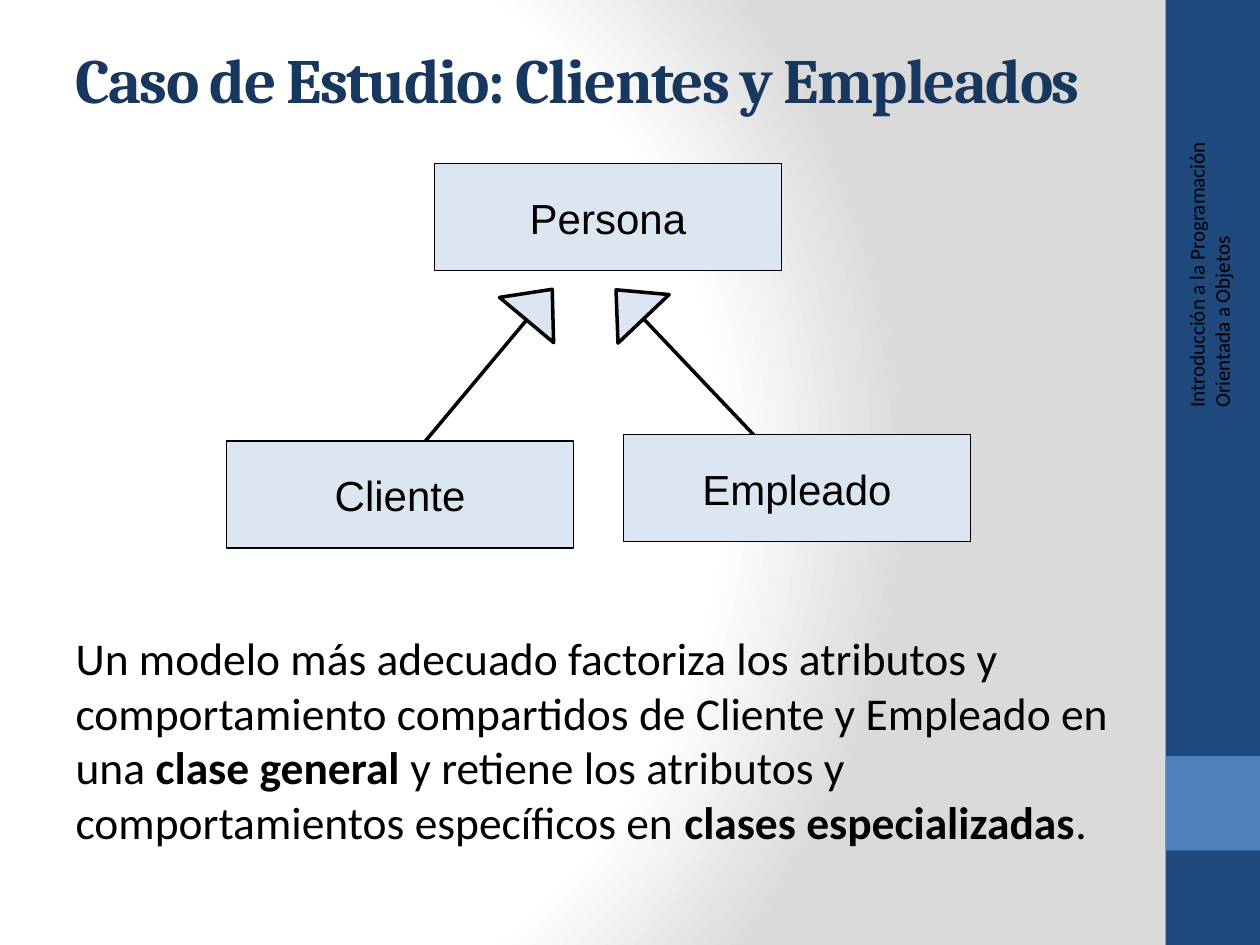
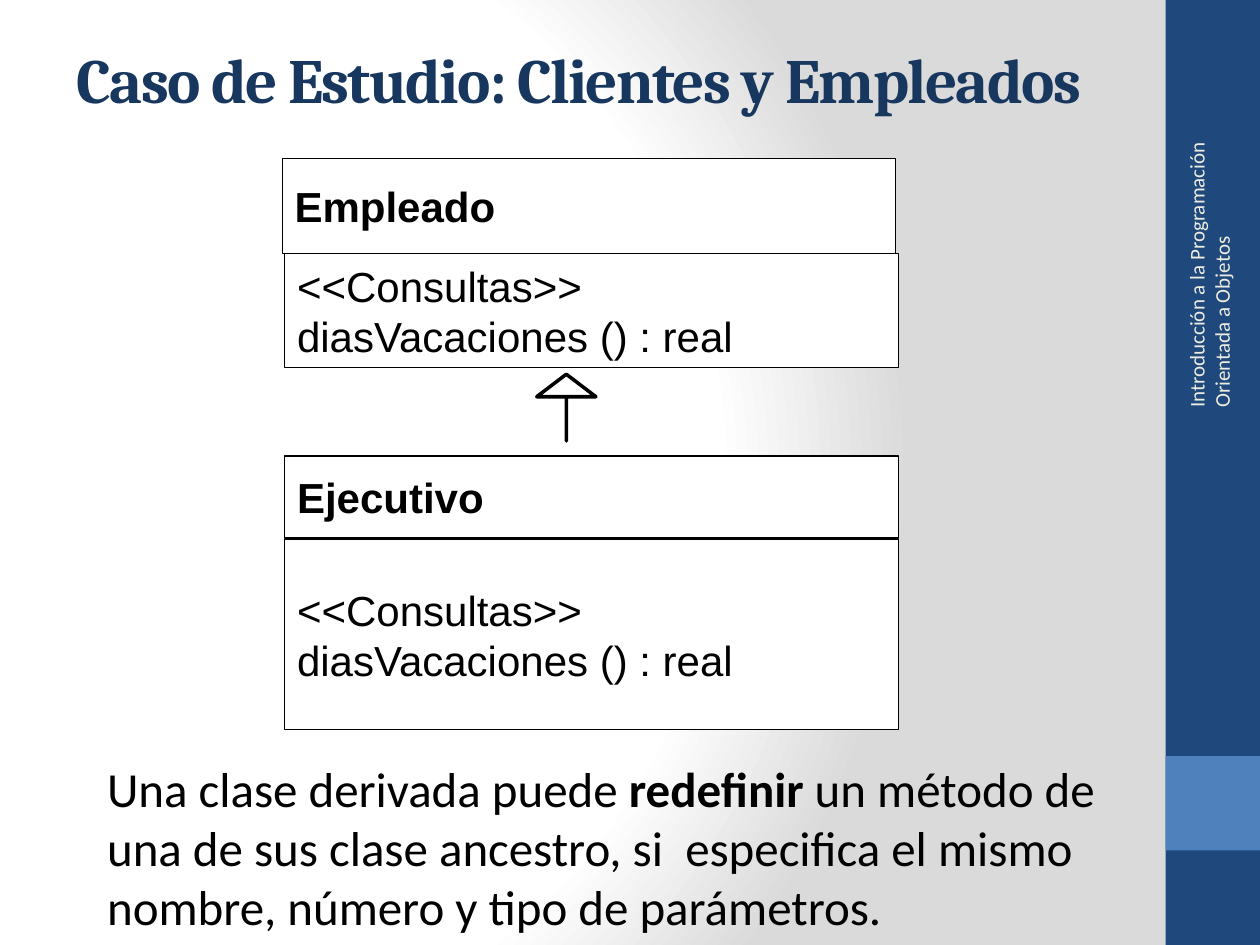
"""Build two slides on inheritance between Persona, Cliente and Empleado."""
from lxml import etree
from pptx import Presentation
from pptx.dml.color import RGBColor
from pptx.enum.shapes import MSO_SHAPE as Shape
from pptx.enum.text import MSO_ANCHOR as Anchor, MSO_AUTO_SIZE as AutoSize, PP_ALIGN as Align
from pptx.oxml import parse_xml
from pptx.oxml.ns import nsdecls, qn
from pptx.util import Inches, Pt

COLORS = {
    "black": "000000", "white": "FFFFFF", "grey": "DADADA", "cream": "EEECE1",
    "navy": "1F497D", "blue": "4F81BD", "title": "17375E", "pale": "DCE6F2",
}
TITLE = "Caso de Estudio: Clientes y Empleados"
COURSE = "Introducción a la Programación Orientada a Objetos"
METHODS = ["<<Consultas>>", "diasVacaciones () : real"]
GRADIENT_STOPS = [(0, "white"), (75000, "white"), (100000, "grey")]


def rgb(name):
    return RGBColor.from_string(COLORS[name])


def place(shape, left, top, width, height):
    shape.left, shape.top = Inches(left), Inches(top)
    shape.width, shape.height = Inches(width), Inches(height)


def style_font(para, face, size, color="black", bold=None):
    font = para.font
    font.name, font.size, font.bold = face, Pt(size), bold
    font.color.rgb = rgb(color)


def add_block(slide, kind, at, fill, line_width=None):
    block = slide.shapes.add_shape(kind, *map(Inches, at))
    block.shadow.inherit = False
    block.fill.solid()
    block.fill.fore_color.rgb = rgb(fill)
    if line_width:
        block.line.color.rgb = rgb("black")
        block.line.width = Pt(line_width)
    else:
        block.line.fill.background()
    return block


def add_class_box(slide, at, lines, fill="white", align=Align.LEFT, bold=False):
    box = add_block(slide, Shape.RECTANGLE, at, fill, 0.75)
    frame = box.text_frame
    frame.word_wrap = True
    frame.vertical_anchor = Anchor.MIDDLE
    frame.text = "\n".join(lines)
    for para in frame.paragraphs:
        para.alignment = align
        style_font(para, "Arial", 24, bold=bold)


def add_inheritance_arrow(slide, at, rotation, head, fill):
    arrow = add_block(slide, Shape.RIGHT_ARROW, at, fill, 2)
    arrow.rotation = rotation
    arrow.adjustments[0], arrow.adjustments[1] = 0, head


def set_background(master):
    fill = master.background.fill
    fill.solid()
    stops = "".join(
        f'<a:gs pos="{pos}"><a:srgbClr val="{COLORS[name]}"/></a:gs>'
        for pos, name in GRADIENT_STOPS)
    gradient = parse_xml(
        f'<a:gradFill {nsdecls("a")} rotWithShape="1"><a:gsLst>{stops}</a:gsLst>'
        '<a:path path="circle"><a:fillToRect l="20000" t="50000" r="100000" b="50000"/>'
        '</a:path></a:gradFill>')
    solid = next(master.element.iter(qn("a:solidFill")))
    solid.getparent().replace(solid, gradient)


def add_master_bands(master, slide):
    bands = [((9.25, 0, 0.75, 7.5), "navy"), ((9.25, 6, 0.75, 0.75), "blue")]
    for number, (at, color) in enumerate(bands, start=101):
        band = add_block(slide, Shape.RECTANGLE, at, color)
        next(band.element.iter(qn("p:cNvPr"))).set("id", str(number))
        master.shapes.element.append(band.element)


def set_title(slide, left):
    title = slide.shapes.title
    place(title, left, 0, 8.67, 1.25)
    frame = title.text_frame
    frame.text = TITLE
    frame.auto_size = AutoSize.NONE
    frame.vertical_anchor = Anchor.MIDDLE
    para = frame.paragraphs[0]
    para.alignment = Align.LEFT
    style_font(para, "Cambria", 36, "title", True)
    next(title.element.iter(qn("a:defRPr"))).set("spc", "-100")


def set_body(slide, at, marked_text, size):
    """Fill the body placeholder, with bold between asterisks."""
    body = slide.placeholders[1]
    place(body, *at)
    frame = body.text_frame
    frame.auto_size = AutoSize.NONE
    para = frame.paragraphs[0]
    para.space_before = Pt(6)
    style_font(para, "Calibri", size)
    for index, text in enumerate(marked_text.split("*")):
        span = para.add_run()
        span.text = text
        span.font.bold = index % 2 == 1
    properties = next(body.element.iter(qn("a:pPr")))
    properties.set("marL", "0")
    properties.set("indent", "0")
    bullet = etree.Element(qn("a:buNone"))
    properties.find(qn("a:defRPr")).addprevious(bullet)


def add_course_label(slide, color):
    label = slide.shapes.add_textbox(*map(Inches, (8.26, 1.8, 2.67, 0.4)))
    label.rotation = 270
    frame = label.text_frame
    frame.word_wrap = True
    frame.vertical_anchor = Anchor.MIDDLE
    frame.text = COURSE
    style_font(frame.paragraphs[0], "Calibri", 12, color)


def add_case_slide(deck, title_left, label_color):
    slide = deck.slides.add_slide(deck.slide_layouts[1])
    set_title(slide, title_left)
    add_course_label(slide, label_color)
    return slide


def draw_hierarchy(slide):
    for left, rotation, top in [(3.07, 309.9, 2.63), (4.64, 226.5, 2.6)]:
        add_inheritance_arrow(slide, (left, top, 1.6, 0.56), rotation, 0.567, "pale")
    for name, left, top in [("Persona", 3.45, 1.3), ("Cliente", 1.8, 3.5),
                            ("Empleado", 4.95, 3.45)]:
        add_class_box(slide, (left, top, 2.75, 0.85), [name], "pale", Align.CENTER)
    set_body(slide, (0.5, 4.95, 8.52, 2.34),
             "Un modelo más adecuado factoriza los atributos y comportamiento "
             "compartidos de Cliente y Empleado en una *clase general *y retiene los "
             "atributos y comportamientos específicos en *clases especializadas*.", 26)


def draw_redefinition(slide):
    add_class_box(slide, (2.24, 1.26, 4.87, 0.75), ["Empleado"], bold=True)
    add_class_box(slide, (2.26, 2.01, 4.87, 0.91), METHODS)
    add_class_box(slide, (2.26, 3.62, 4.87, 0.65), ["Ejecutivo"], bold=True)
    add_class_box(slide, (2.26, 4.28, 4.87, 1.51), METHODS)
    add_inheritance_arrow(slide, (4.23, 3, 0.53, 0.47), 270, 0.38, "white")
    set_body(slide, (0.75, 5.97, 8.19, 1.51),
             "Una clase derivada puede *redefinir* un método de una de sus clase "
             "ancestro, si  especifica el mismo nombre, número y tipo de parámetros.", 28)


def main():
    deck = Presentation()
    deck.slide_width, deck.slide_height = Inches(10), Inches(7.5)
    set_background(deck.slide_master)
    hierarchy = add_case_slide(deck, 0.5, "black")
    add_master_bands(deck.slide_master, hierarchy)
    draw_hierarchy(hierarchy)
    draw_redefinition(add_case_slide(deck, 0.51, "cream"))
    deck.save("out.pptx")


if __name__ == "__main__":
    main()
